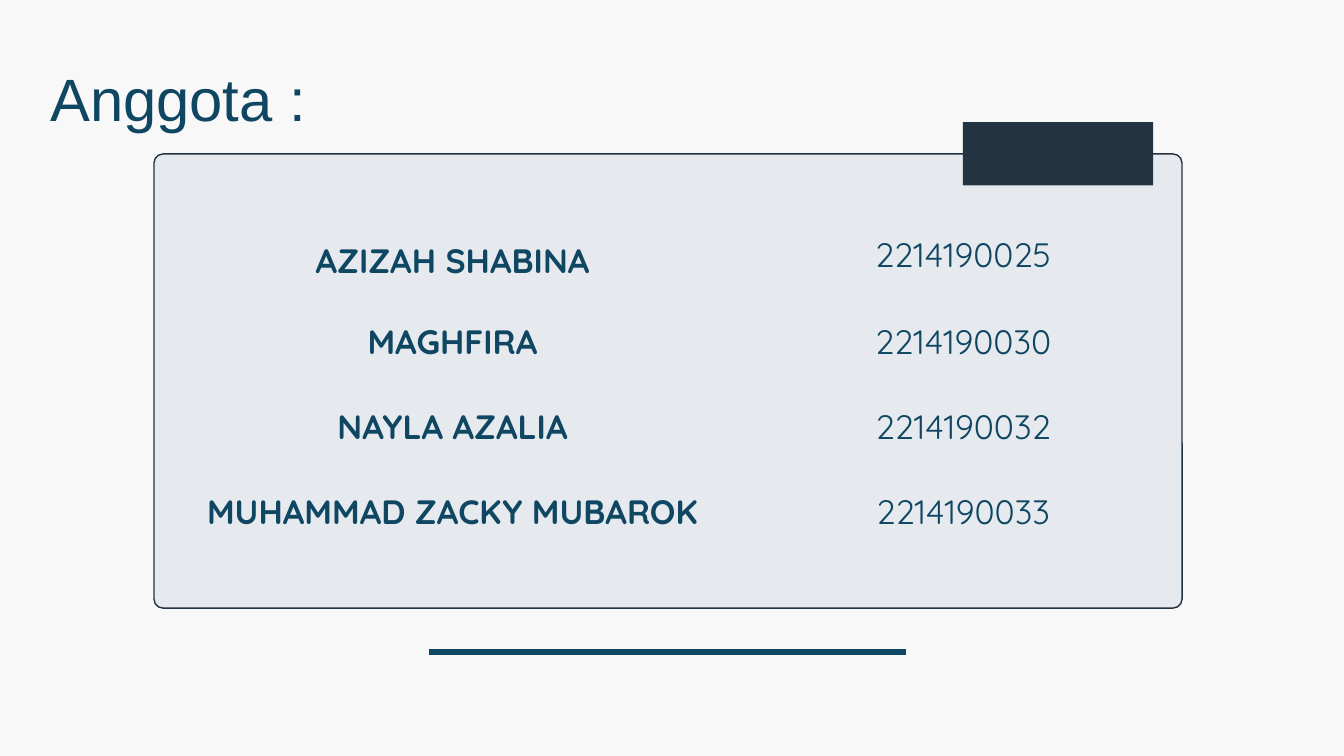
from dataclasses import dataclass
from typing import Any

from lxml import etree
from pptx import Presentation
from pptx import util as u
from pptx.dml.color import RGBColor
from pptx.enum import shapes, text
from pptx.oxml.ns import qn

MEMBERS = [
    ("AZIZAH SHABINA", "2214190025"),
    ("MAGHFIRA", "2214190030"),
    ("NAYLA AZALIA", "2214190032"),
    ("MUHAMMAD ZACKY MUBAROK", "2214190033"),
]
NAME_CENTER, NUMBER_CENTER = 17.11, 36.41
COLUMN_WIDTH, LONG_NAME_WIDTH = 13.94, 19.69
NAME_TOPS = [8.79, 11.86, 15.09, 18.31]
NUMBER_TOPS = [8.59] + NAME_TOPS[1:]


def rgb(value):
    return RGBColor.from_string(value)


def place(shape, left, top, width, height):
    shape.left, shape.top = u.Cm(left), u.Cm(top)
    shape.width, shape.height = u.Cm(width), u.Cm(height)


@dataclass
class MemberSlide:
    slide: Any
    ink: str = "0F4662"
    dark: str = "243342"
    panel_fill: str = "E6EAEF"
    paper: str = "F8F8F8"
    title_font: str = "Arial"
    body_font: str = "Quicksand"

    def background(self):
        fill = self.slide.background.fill
        fill.solid()
        fill.fore_color.rgb = rgb(self.paper)

    def set_words(self, shape, words, font_name, size, spacing, align, bold=False):
        frame = shape.text_frame
        frame.word_wrap = True
        frame.auto_size = text.MSO_AUTO_SIZE.SHAPE_TO_FIT_TEXT
        frame.vertical_anchor = text.MSO_ANCHOR.TOP
        frame.margin_left = frame.margin_right = 0
        frame.margin_top = frame.margin_bottom = 0
        paragraph = frame.paragraphs[0]
        paragraph.alignment = align
        paragraph.line_spacing = u.Pt(spacing)
        run = paragraph.add_run()
        run.text = words
        run.font.name = font_name
        run.font.size = u.Pt(size)
        run.font.bold = bold
        run.font.color.rgb = rgb(self.ink)

    def title(self, words, *box):
        heading = self.slide.shapes.title
        place(heading, *box)
        self.set_words(heading, words, self.title_font, 64, 89.6, text.PP_ALIGN.LEFT)

    def entry(self, words, center, top, width=COLUMN_WIDTH, bold=False):
        """Add one line of the list, centred on its column."""
        label = self.slide.shapes.add_textbox(0, 0, 0, 0)
        place(label, center - width / 2, top, width, 1.68)
        self.set_words(label, words, self.body_font, 36.2, 50.7,
                       text.PP_ALIGN.CENTER, bold)

    def block(self, kind, fill, *box, outline=None):
        shape = self.slide.shapes.add_shape(kind, *(u.Cm(length) for length in box))
        shape.shadow.inherit = False
        shape.fill.solid()
        shape.fill.fore_color.rgb = rgb(fill)
        if outline:
            shape.line.color.rgb = rgb(outline)
            shape.line.width = u.Pt(1.5)
        else:
            shape.line.fill.background()
        return shape

    def rule(self, left, right, y):
        line = self.slide.shapes.add_connector(
            shapes.MSO_CONNECTOR.STRAIGHT, u.Cm(left), u.Cm(y), u.Cm(right), u.Cm(y))
        line.line.color.rgb = rgb(self.ink)
        line.line.width = u.Pt(6)
        etree.SubElement(line._element.spPr, qn("a:effectLst"))


def main():
    deck = Presentation()
    deck.slide_width, deck.slide_height = u.Cm(50.8), u.Cm(28.58)
    page = MemberSlide(deck.slides.add_slide(deck.slide_layouts[5]))
    page.background()
    page.rule(16.23, 34.26, 24.64)

    panel = page.block(shapes.MSO_SHAPE.ROUNDED_RECTANGLE, page.panel_fill,
                       5.82, 5.82, 38.86, 17.17, outline=page.dark)
    panel.adjustments[0] = 0.02

    for (name, number), name_top, number_top in zip(MEMBERS, NAME_TOPS, NUMBER_TOPS):
        width = LONG_NAME_WIDTH if len(name) > 20 else COLUMN_WIDTH
        page.entry(name, NAME_CENTER, name_top, width, bold=True)
        page.entry(number, NUMBER_CENTER, number_top)

    page.title("Anggota :", 1.9, 1.88, 27.53, 3.2)
    page.block(shapes.MSO_SHAPE.RECTANGLE, page.dark, 36.4, 4.62, 7.19, 2.39)
    deck.save("out.pptx")


if __name__ == "__main__":
    main()
